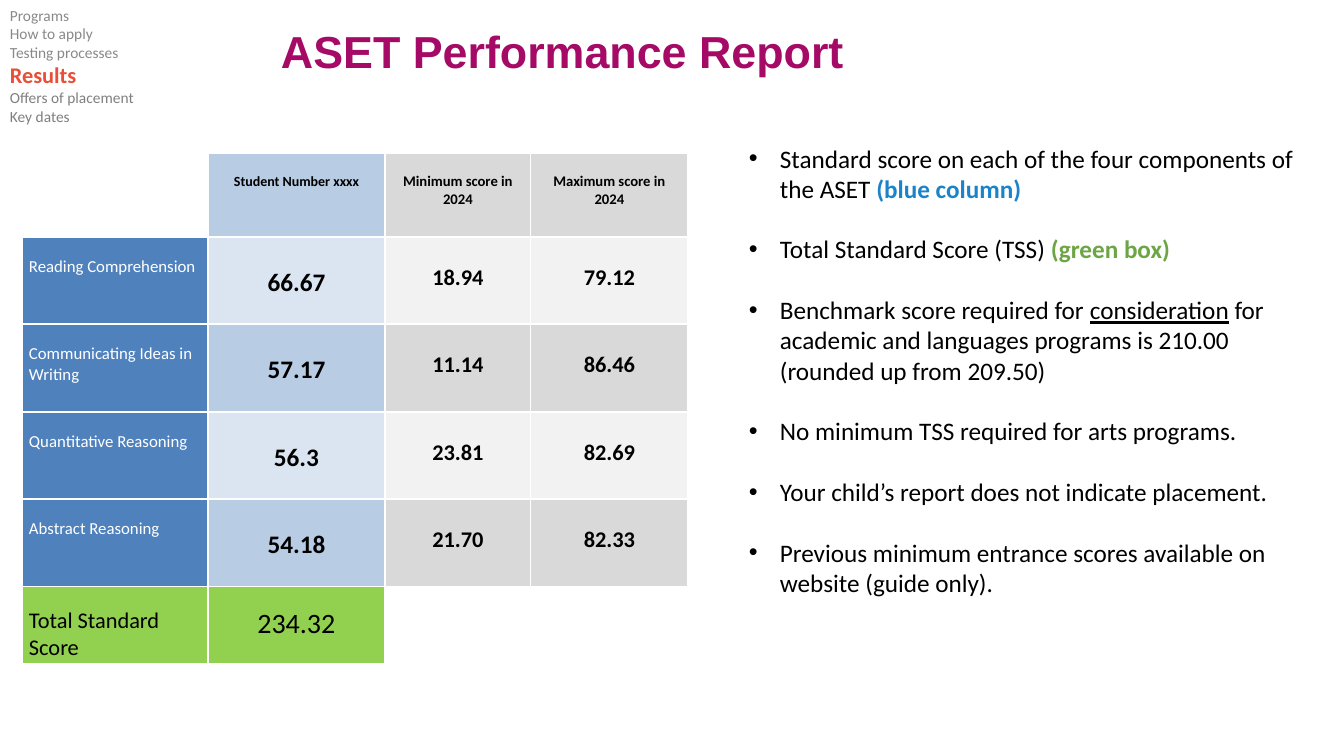
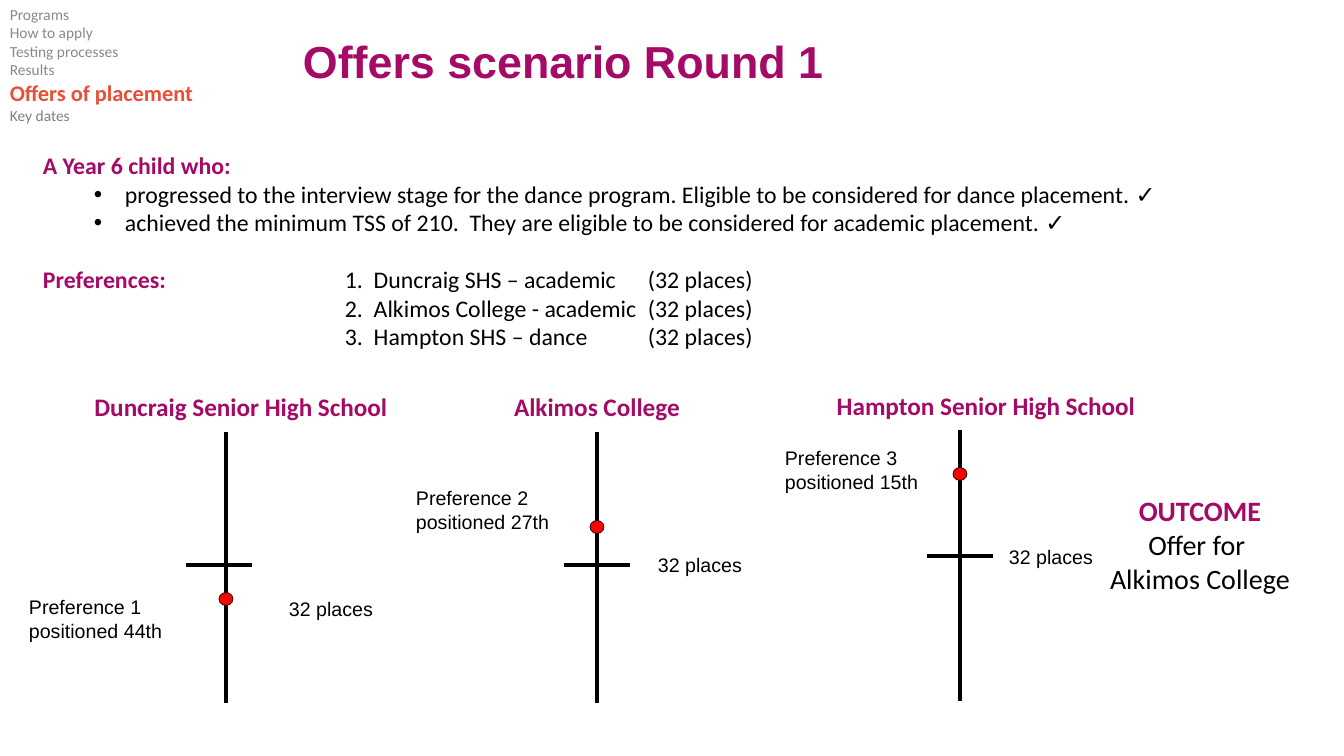
from lxml import etree
from pptx import Presentation
from pptx.dml.color import RGBColor
from pptx.enum.shapes import MSO_CONNECTOR, MSO_SHAPE
from pptx.enum.text import PP_ALIGN
from pptx.oxml.ns import qn
from pptx.util import Pt

LEFT, CENTER = PP_ALIGN.LEFT, PP_ALIGN.CENTER
LINE, OVAL = MSO_CONNECTOR.STRAIGHT, MSO_SHAPE.OVAL
BLACK = RGBColor(0, 0, 0)
WHITE = RGBColor(255, 255, 255)
RED = RGBColor(255, 0, 0)
PLUM = RGBColor(0xA4, 0x0A, 0x66)
ORANGE = RGBColor(0xE9, 0x4F, 0x36)
NAV_BEFORE = RGBColor(0x89, 0x89, 0x89)
NAV_AFTER = RGBColor(0x7F, 0x7F, 0x7F)
BLUE_TEXT = RGBColor(0x1B, 0x83, 0xC9)
GREEN_TEXT = RGBColor(0x6C, 0xA6, 0x44)
BLUE = RGBColor(0x4F, 0x81, 0xBD)
BLUE_MID = RGBColor(0xB8, 0xCC, 0xE4)
BLUE_PALE = RGBColor(0xDB, 0xE5, 0xF1)
GREY_MID = RGBColor(0xD9, 0xD9, 0xD9)
GREY_PALE = RGBColor(0xF2, 0xF2, 0xF2)
GREEN = RGBColor(0x92, 0xD0, 0x50)
SANS, BODY = "Arial", "Calibri"

NAV = ["Programs", "How to apply", "Testing processes", "Results",
       "Offers of placement", "Key dates"]

COLUMNS = [186, 177, 146, 130, 27, 28]
ROWS = [22, 84, 87, 88, 87, 88, 77]
LAST = len(ROWS) - 1
SPANS = [(0, 0, 1), (0, 2, 3), (0, 4, 5), (LAST, 2, 5)]
SPANS += [(r, 3, 4) for r in range(1, LAST)]
HEADERS = [("Student Number xxxx", 10, BLUE_MID),
           ("Minimum score in 2024", 10.5, GREY_MID),
           ("Maximum score in 2024", 10.5, GREY_MID)]
SCORES = [("Reading Comprehension", "66.67", "18.94", "79.12"),
          ("Communicating Ideas in Writing", "57.17", "11.14", "86.46"),
          ("Quantitative Reasoning", "56.3", "23.81", "82.69"),
          ("Abstract Reasoning", "54.18", "21.70", "82.33")]
TOTAL = ("Total Standard Score", "234.32")

NOTES = [
    [("Standard score on each of the four components of the ASET ", {}),
     ("(blue column)", {"color": BLUE_TEXT, "bold": True})],
    [("Total Standard Score (TSS) ", {}),
     ("(green box)", {"color": GREEN_TEXT, "bold": True})],
    [("Benchmark score required for ", {}),
     ("consideration", {"underline": True}),
     (" for academic and languages programs is 210.00 (rounded up from 209.50)", {})],
    [("No minimum TSS required for arts programs.", {})],
    [("Your child’s report does not indicate placement.", {})],
    [("Previous minimum entrance scores available on website (guide only).", {})],
]

CHILD = [
    "progressed to the interview stage for the dance program. "
    "Eligible to be considered for dance placement. ✓",
    "achieved the minimum TSS of 210.  They are eligible to be considered "
    "for academic placement. ✓",
]
PREFERENCES = [("Preferences:", "1.  Duncraig SHS – academic"),
               ("", "2.  Alkimos College - academic"),
               ("", "3.  Hampton SHS – dance")]
PLACES = "32 places"

SCHOOLS = [
    dict(name="Duncraig Senior High School", name_at=(75, 386), axis=(226, 432),
         tick=(186, 565), dot=599, places=(279, 592), rank="44th", rank_at=(19, 590)),
    dict(name="Alkimos College", name_at=(431, 386), axis=(597, 432),
         tick=(564, 565), dot=527, places=(648, 548), rank="27th", rank_at=(406, 481)),
    dict(name="Hampton Senior High School", name_at=(820, 385), axis=(960, 430),
         tick=(927, 556), dot=474, places=(999, 540), rank="15th", rank_at=(775, 441)),
]
AXIS_H, TICK_W, DOT_W, DOT_H = 271, 66, 14, 13


def px(n):
    return round(n * 914400 / 100.8)


def add_run(p, text, size, color=BLACK, bold=False, underline=False, font=BODY):
    r = p.add_run()
    r.text = text
    f = r.font
    f.name, f.size, f.bold, f.underline = font, Pt(size), bold, underline
    f.color.rgb = color


def add_box(s, x, y, w, h, inset=True):
    tf = s.shapes.add_textbox(px(x), px(y), px(w), px(h)).text_frame
    tf.word_wrap = True
    if not inset:
        tf.margin_left = tf.margin_right = tf.margin_top = tf.margin_bottom = 0
    return tf


def next_paragraph(tf, align=LEFT):
    first = tf.paragraphs[0]
    p = tf.add_paragraph() if first.runs else first
    p.alignment = align
    return p


def add_lines(s, box, lines, size, color=BLACK, bold=False, font=BODY, align=LEFT):
    tf = add_box(s, *box)
    for text in lines:
        add_run(next_paragraph(tf, align), text, size, color, bold, font=font)
    return tf


def set_bullet(p, left):
    ppr = p._p.get_or_add_pPr()
    ppr.set("marL", str(px(left)))
    ppr.set("indent", str(px(-31)))
    etree.SubElement(ppr, qn("a:buFont")).set("typeface", SANS)
    etree.SubElement(ppr, qn("a:buChar")).set("char", "•")


def set_tabs(p, stops):
    tabs = etree.SubElement(p._p.get_or_add_pPr(), qn("a:tabLst"))
    for stop in stops:
        tab = etree.SubElement(tabs, qn("a:tab"))
        tab.set("pos", str(px(stop)))
        tab.set("algn", "l")


def add_line(s, x1, y1, x2, y2):
    c = s.shapes.add_connector(LINE, px(x1), px(y1), px(x2), px(y2))
    c.line.color.rgb = BLACK
    c.line.width = Pt(2.25)
    etree.SubElement(c._element.spPr, qn("a:effectLst"))


def new_slide(prs, title, x, y, active, nav_y):
    s = prs.slides.add_slide(prs.slide_layouts[6])
    p = add_box(s, x, y, 1000, 97, inset=False).paragraphs[0]
    p.line_spacing = 0.9
    add_run(p, title, 32, PLUM, True, font=SANS)
    tf = add_box(s, 0, nav_y, 230, 140)
    current = NAV.index(active)
    for i, item in enumerate(NAV):
        p = next_paragraph(tf)
        if i == current:
            add_run(p, item, 16, ORANGE, True)
        else:
            add_run(p, item, 11, NAV_BEFORE if i < current else NAV_AFTER)
    return s


def set_borders(cell):
    tcpr = cell._tc.get_or_add_tcPr()
    for i, side in enumerate(("a:lnL", "a:lnR", "a:lnT", "a:lnB")):
        ln = etree.Element(qn(side), w=str(Pt(1)))
        fill = etree.SubElement(ln, qn("a:solidFill"))
        etree.SubElement(fill, qn("a:srgbClr")).set("val", str(WHITE))
        tcpr.insert(i, ln)


def clear_cell(cell):
    cell.fill.solid()
    cell.fill.fore_color.rgb = WHITE
    cell.margin_top = cell.margin_bottom = 0
    p = cell.text_frame.paragraphs[0]
    etree.SubElement(p._p, qn("a:endParaRPr")).set("sz", "1000")
    set_borders(cell)


def fill_cell(cell, text, fill, size, top=20, color=BLACK, bold=False, align=CENTER):
    cell.fill.fore_color.rgb = fill
    cell.margin_left = cell.margin_right = px(7)
    cell.margin_top = px(top)
    p = cell.text_frame.paragraphs[0]
    for end in p._p.findall(qn("a:endParaRPr")):
        p._p.remove(end)
    p.alignment = align
    add_run(p, text, size, color, bold)


def add_score_table(s):
    t = s.shapes.add_table(len(ROWS), len(COLUMNS), px(22), px(131),
                           px(sum(COLUMNS)), px(sum(ROWS))).table
    t.first_row = t.horz_banding = False
    for col, w in zip(t.columns, COLUMNS):
        col.width = px(w)
    for row, h in zip(t.rows, ROWS):
        row.height = px(h)
    for cell in t.iter_cells():
        clear_cell(cell)
    for r, first, final in SPANS:
        t.cell(r, first).merge(t.cell(r, final))
    for c, (text, size, fill) in enumerate(HEADERS, 1):
        fill_cell(t.cell(1, c), text, fill, size, bold=True)
    for r, (label, score, low, high) in enumerate(SCORES, 2):
        blue, grey = (BLUE_MID, GREY_MID) if r % 2 else (BLUE_PALE, GREY_PALE)
        fill_cell(t.cell(r, 0), label, BLUE, 12, color=WHITE, align=LEFT)
        fill_cell(t.cell(r, 1), score, blue, 18, top=31, bold=True)
        for c, value in ((2, low), (3, high)):
            fill_cell(t.cell(r, c), value, grey, 16, top=27, bold=True)
    fill_cell(t.cell(LAST, 0), TOTAL[0], GREEN, 16, align=LEFT)
    fill_cell(t.cell(LAST, 1), TOTAL[1], GREEN, 20)


def add_school(s, school):
    x, y = school["axis"]
    tick_x, tick_y = school["tick"]
    add_line(s, x, y, x, y + AXIS_H)
    add_line(s, tick_x, tick_y, tick_x + TICK_W, tick_y)
    dot = s.shapes.add_shape(OVAL, px(x - DOT_W / 2), px(school["dot"] - DOT_H / 2),
                             px(DOT_W), px(DOT_H))
    dot.shadow.inherit = False
    dot.fill.solid()
    dot.fill.fore_color.rgb = RED
    dot.line.color.rgb = BLACK
    dot.line.width = Pt(0.5)
    add_lines(s, (*school["places"], 142, 34), [PLACES], 14, font=SANS)
    number = SCHOOLS.index(school) + 1
    rank = [f"Preference {number}", f"positioned {school['rank']}"]
    add_lines(s, (*school["rank_at"], 181, 57), rank, 14, font=SANS)
    add_lines(s, (*school["name_at"], 332, 40), [school["name"]], 18, PLUM, True,
              align=CENTER)


def build_report(prs):
    s = new_slide(prs, "ASET Performance Report", 281, 30, "Results", 1)
    add_score_table(s)
    tf = add_box(s, 739, 138, 577, 499)
    for i, note in enumerate(NOTES):
        p = next_paragraph(tf)
        if i:
            p.space_before = Pt(21.7)
        set_bullet(p, 31)
        for text, style in note:
            add_run(p, text, 18, **style)


def build_offers(prs):
    s = new_slide(prs, "Offers scenario Round 1", 303, 40, "Offers of placement", 0)
    tf = add_lines(s, (33, 146, 1284, 212), ["A Year 6 child who:"], 17, PLUM, True)
    for text in CHILD:
        p = next_paragraph(tf)
        set_bullet(p, 82)
        add_run(p, text, 17)
    for i, (heading, choice) in enumerate(PREFERENCES):
        p = next_paragraph(tf)
        if i == 0:
            p.space_before = Pt(20)
        set_tabs(p, (302, 605))
        if heading:
            add_run(p, heading, 17, PLUM, True)
        add_run(p, f"\t{choice}\t({PLACES})", 17)
    for school in SCHOOLS:
        add_school(s, school)
    tf = add_lines(s, (1083, 489, 234, 112), ["OUTCOME"], 20, PLUM, True, align=CENTER)
    for text in ("Offer for ", "Alkimos College"):
        add_run(next_paragraph(tf, CENTER), text, 20)


def main():
    prs = Presentation()
    prs.slide_width, prs.slide_height = px(1344), px(756)
    build_report(prs)
    build_offers(prs)
    prs.save("out.pptx")


if __name__ == "__main__":
    main()
